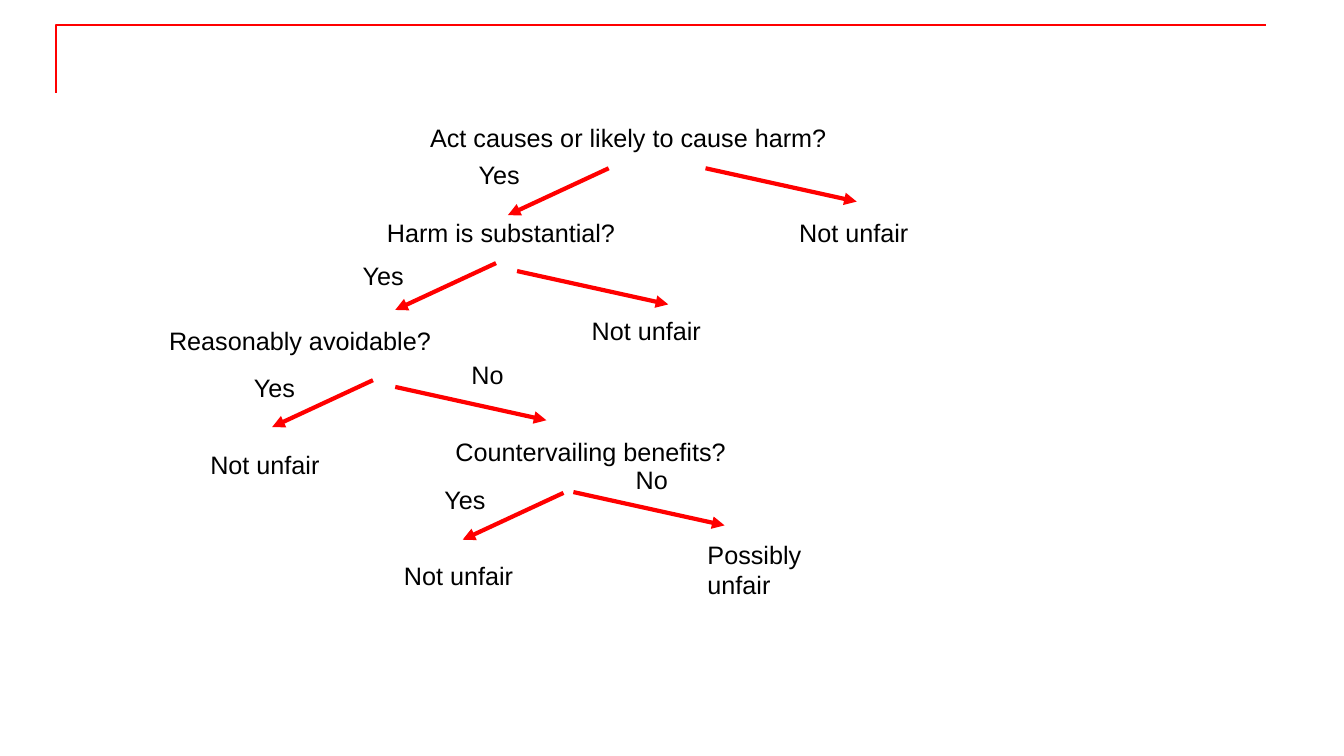
from dataclasses import dataclass

from lxml.etree import SubElement
from pptx import Presentation
from pptx.dml.color import RGBColor
from pptx.enum.shapes import MSO_CONNECTOR
from pptx.enum.text import MSO_AUTO_SIZE
from pptx.oxml.ns import qn
from pptx.util import Cm, Pt


@dataclass(frozen=True)
class Theme:
    """Colours, type and line sizes of the slide."""
    font: str = "Arial"
    text_size: int = 18
    text: RGBColor = RGBColor(0, 0, 0)
    accent: RGBColor = RGBColor(255, 0, 0)
    frame_width: float = 1.5
    arrow_width: float = 3


THEME = Theme()
TEXT_HEIGHT = 1.02
LABEL_WIDTH = 2.34
OUTCOME_WIDTH = 3.43
YES_STEP = (-2.54, 1.18)
NO_STEP = (3.81, 0.84)

DECISIONS = [
    {
        "question": "Act causes or likely to cause harm?",
        "box": (10.59, 2.97, 11.43),
        "yes_arrow": (4.75, 1.27),
        "no_arrow": (7.19, 1.27),
        "labels": [("Yes", 1.22, 0.92)],
        "outcomes": [("Not unfair", 9.3, 2.39)],
    },
    {
        "question": "Harm is substantial?",
        "box": (9.5, 5.36, 7.62),
        "yes_arrow": (3, 1.27),
        "no_arrow": (3.53, 1.47),
        "labels": [("Yes", -0.61, 1.07)],
        "outcomes": [("Not unfair", 5.16, 2.46)],
    },
    {
        "question": "Reasonably avoidable?",
        "box": (4.01, 8.08, 7.62),
        "yes_arrow": (5.39, 1.5),
        "no_arrow": (5.95, 1.67),
        "labels": [("Yes", 2.14, 1.17), ("No", 7.62, 0.84)],
        "outcomes": [("Not unfair", 1.04, 3.12)],
    },
    {
        "question": "Countervailing benefits?",
        "box": (11.23, 10.87, 7.62),
        "yes_arrow": (2.97, 1.55),
        "no_arrow": (3.22, 1.53),
        "labels": [("Yes", -0.28, 1.22), ("No", 4.54, 0.71)],
        "outcomes": [("Not unfair", -1.3, 3.13), ("Possibly unfair", 6.35, 2.59)],
    },
]


def add_frame(slide, left, top, width, height):
    """Draw the corner rule along the left and top of the box."""
    builder = slide.shapes.build_freeform(Cm(left), Cm(top + height))
    builder.add_line_segments(
        [(Cm(left), Cm(top)), (Cm(left + width), Cm(top))], close=False
    )
    frame = builder.convert_to_shape()
    frame.shadow.inherit = False
    frame.fill.background()
    frame.line.color.rgb = THEME.accent
    frame.line.width = Pt(THEME.frame_width)


def add_text(slide, text, left, top, width):
    """Add a wrapped text box that grows with its text."""
    box = slide.shapes.add_textbox(Cm(left), Cm(top), Cm(width), Cm(TEXT_HEIGHT))
    frame = box.text_frame
    frame.word_wrap = True
    frame.auto_size = MSO_AUTO_SIZE.SHAPE_TO_FIT_TEXT
    paragraph = frame.paragraphs[0]
    paragraph.text = text
    paragraph.font.name = THEME.font
    paragraph.font.size = Pt(THEME.text_size)
    paragraph.font.color.rgb = THEME.text


def add_arrow(slide, left, top, step):
    """Draw an arrow from a point along a step."""
    arrow = slide.shapes.add_connector(
        MSO_CONNECTOR.STRAIGHT,
        Cm(left), Cm(top), Cm(left + step[0]), Cm(top + step[1]),
    )
    arrow.line.color.rgb = THEME.accent
    arrow.line.width = Pt(THEME.arrow_width)
    SubElement(arrow.line._get_or_add_ln(), qn("a:tailEnd"), type="triangle")
    SubElement(arrow._element.spPr, qn("a:effectLst"))


def add_decision(slide, decision):
    """Place a question with its branches relative to the question box."""
    left, top, width = decision["box"]
    add_text(slide, decision["question"], left, top, width)
    for branch, step in (("yes_arrow", YES_STEP), ("no_arrow", NO_STEP)):
        across, down = decision[branch]
        add_arrow(slide, left + across, top + down, step)
    for group, text_width in (("labels", LABEL_WIDTH), ("outcomes", OUTCOME_WIDTH)):
        for text, across, down in decision[group]:
            add_text(slide, text, left + across, top + down, text_width)


def main():
    """Build the decision tree slide and save it."""
    presentation = Presentation()
    presentation.slide_width = Cm(33.87)
    presentation.slide_height = Cm(19.05)
    slide = presentation.slides.add_slide(presentation.slide_layouts[6])
    add_frame(slide, 1.42, 0.64, 30.48, 1.7)
    for decision in DECISIONS:
        add_decision(slide, decision)
    presentation.save("out.pptx")


if __name__ == "__main__":
    main()
